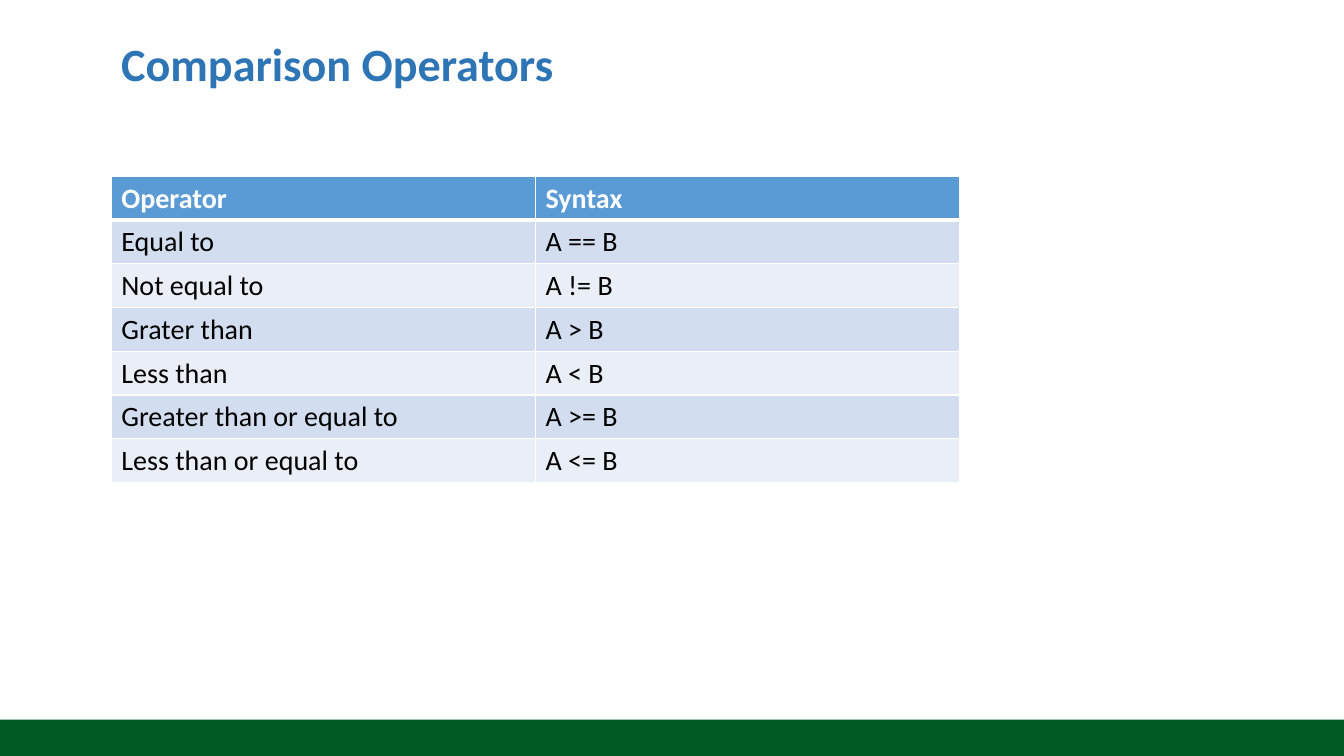
"""Build a slide with a table of comparison operators."""
import pptx
import pptx.dml.color
import pptx.enum.shapes
import pptx.enum.text
import pptx.oxml
import pptx.oxml.ns
import pptx.util

Pt = pptx.util.Pt


def color(hex_code):
    return pptx.dml.color.RGBColor.from_string(hex_code)


def write(frame, text, size=20, ink="000000", bold=False, spacing=1.0):
    frame.word_wrap = True
    paragraph = frame.paragraphs[0]
    paragraph.line_spacing = spacing
    run = paragraph.add_run()
    run.text = text
    run.font.name = "Calibri"
    run.font.size = Pt(size)
    run.font.bold = bold
    run.font.color.rgb = color(ink)


deck = pptx.Presentation()
deck.slide_width, deck.slide_height = Pt(960), Pt(540)
slide = deck.slides.add_slide(deck.slide_layouts[6])

footer = slide.shapes.add_shape(
    pptx.enum.shapes.MSO_SHAPE.RECTANGLE, Pt(0), Pt(514), Pt(960), Pt(26))
footer.shadow.inherit = False
footer.fill.solid()
footer.fill.fore_color.rgb = color("015A22")
footer.line.fill.background()

title = slide.shapes.add_textbox(Pt(79.5), Pt(16.5), Pt(880), Pt(62.5))
title.text_frame.vertical_anchor = pptx.enum.text.MSO_ANCHOR.MIDDLE
write(title.text_frame, "Comparison Operators", size=33, ink="2E75B6", bold=True, spacing=0.9)

operators = [
    ("Operator", "Syntax"),
    ("Equal to", "A == B"),
    ("Not equal to", "A != B"),
    ("Grater than", "A > B"),
    ("Less than", "A < B"),
    ("Greater than or equal to", "A >= B"),
    ("Less than or equal to", "A <= B"),
]
table = slide.shapes.add_table(
    len(operators), 2, Pt(79.5), Pt(126), Pt(606), Pt(31.2 * len(operators))).table
for row_index, entries in enumerate(operators):
    table.rows[row_index].height = Pt(31.2)
    header = row_index == 0
    band = "5B9BD5" if header else ("EAEFF7", "D2DEEF")[row_index % 2]
    for column_index, entry in enumerate(entries):
        cell = table.cell(row_index, column_index)
        write(cell.text_frame, entry, ink="FFFFFF" if header else "000000", bold=header)
        cell.fill.solid()
        cell.fill.fore_color.rgb = color(band)
        widths = {"L": 1, "R": 1, "T": 3 if row_index == 1 else 1, "B": 3 if header else 1}
        for position, (side, width) in enumerate(widths.items()):
            border = pptx.oxml.parse_xml(
                f'<a:ln{side} {pptx.oxml.ns.nsdecls("a")} w="{Pt(width)}">'
                '<a:solidFill><a:srgbClr val="FFFFFF"/></a:solidFill>'
                f'</a:ln{side}>')
            cell._tc.get_or_add_tcPr().insert(position, border)

deck.save("out.pptx")
